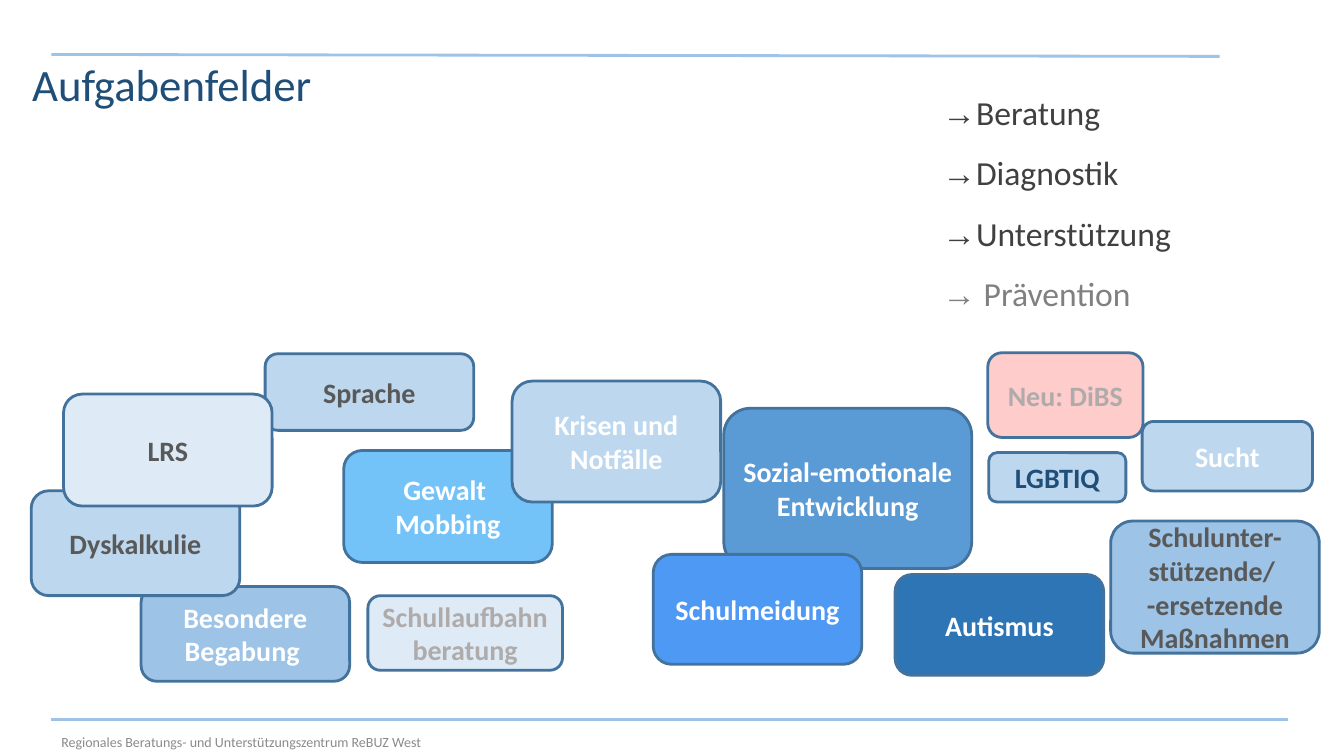
from lxml import etree
from pptx import Presentation
from pptx.dml.color import RGBColor
from pptx.enum.shapes import MSO_CONNECTOR as Connector, MSO_SHAPE as Shape
from pptx.enum.text import MSO_ANCHOR as Anchor, MSO_AUTO_SIZE as AutoSize, PP_ALIGN as Align
from pptx.oxml.ns import qn
from pptx.util import Pt

WHITE = RGBColor(0xFF, 0xFF, 0xFF)
NAVY = RGBColor(0x1F, 0x4E, 0x79)
OUTLINE = RGBColor(0x43, 0x72, 0x9D)
DEEP = RGBColor(0x2E, 0x75, 0xB6)
BLUE = RGBColor(0x5B, 0x9B, 0xD5)
VIVID = RGBColor(0x4E, 0x99, 0xF4)
SKY = RGBColor(0x74, 0xC3, 0xF8)
MID = RGBColor(0x9D, 0xC3, 0xE6)
LIGHT = RGBColor(0xBD, 0xD7, 0xEE)
PALE = RGBColor(0xDE, 0xEB, 0xF7)
PINK = RGBColor(0xFF, 0xCC, 0xCC)
DARK_GREY = RGBColor(0x40, 0x40, 0x40)
TEXT_GREY = RGBColor(0x59, 0x59, 0x59)
MID_GREY = RGBColor(0x80, 0x80, 0x80)
FOOT_GREY = RGBColor(0x8B, 0x8B, 0x8B)
SOFT_GREY = RGBColor(0xAF, 0xAB, 0xAB)

SERVICES = [("Beratung", DARK_GREY), ("Diagnostik", DARK_GREY),
            ("Unterstützung", DARK_GREY), (" Prävention", MID_GREY)]

# Back to front: text, left, top, width, height, fill, text colour
FIELDS = [
    ("Gewalt \nMobbing", 245.5, 321.8, 149, 80, SKY, WHITE),
    ("Krisen und Notfälle", 365.8, 272.2, 149, 86.4, LIGHT, WHITE),
    ("Sozial-emotionale Entwicklung", 517, 291.6, 177.1, 114.5, BLUE, WHITE),
    ("Besondere Begabung ", 100.8, 419, 149, 67.7, MID, WHITE),
    ("Dyskalkulie", 22.3, 350.6, 149, 74.9, LIGHT, TEXT_GREY),
    ("Autismus", 639.4, 410.4, 149, 72, DEEP, WHITE),
    ("Sprache", 189.4, 252.7, 149, 54.7, LIGHT, TEXT_GREY),
    ("Schullaufbahnberatung", 262.8, 425.5, 139, 53.3, PALE, SOFT_GREY),
    ("Schulmeidung", 466.6, 396, 149, 78.5, VIVID, WHITE),
    ("Sucht", 815.8, 301, 121.7, 49.7, LIGHT, WHITE),
    ("LRS", 45.4, 281.5, 149, 80, PALE, TEXT_GREY),
    ("Neu: DiBS", 705.6, 252, 110.9, 60.5, PINK, SOFT_GREY),
    ("LGBTIQ", 706.3, 323.3, 97.9, 35.3, LIGHT, NAVY),
    ("Schulunter-stützende/ \v-ersetzende\nMaßnahmen",
     793.4, 372.2, 149, 94.3, MID, TEXT_GREY),
]


def format_run(r, size, color, font="Calibri", bold=False):
    r.font.name, r.font.size, r.font.bold = font, Pt(size), bold
    r.font.color.rgb = color


def place(sp, left, top, width, height, anchor=Anchor.TOP):
    sp.left, sp.top, sp.width, sp.height = map(Pt, (left, top, width, height))
    tf = sp.text_frame
    tf.word_wrap, tf.auto_size, tf.vertical_anchor = True, AutoSize.NONE, anchor
    return tf


def add_rule(s, x1, y1, x2, y2):
    line = s.shapes.add_connector(Connector.STRAIGHT, Pt(x1), Pt(y1), Pt(x2), Pt(y2))
    line.line.color.rgb = MID
    line.line.width = Pt(0)
    etree.SubElement(line._element.spPr, qn("a:effectLst"))


def add_title(s, left, top, width, height):
    tf = place(s.shapes.title, left, top, width, height)
    tf.text = "Aufgabenfelder"
    p = tf.paragraphs[0]
    p.alignment, p.line_spacing = Align.LEFT, 0.9
    format_run(p.runs[0], 32, NAVY)


def add_footer(s, left, top, width, height):
    sp = s.shapes.add_textbox(0, 0, 0, 0)
    tf = place(sp, left, top, width, height, Anchor.MIDDLE)
    tf.text = "Regionales Beratungs- und Unterstützungszentrum ReBUZ West"
    format_run(tf.paragraphs[0].runs[0], 10, FOOT_GREY)


def add_services(s, left, top, width, height):
    tf = place(s.placeholders[1], left, top, width, height)
    for i, (service, color) in enumerate(SERVICES):
        p = tf.add_paragraph() if i else tf.paragraphs[0]
        pPr = p._p.get_or_add_pPr()
        pPr.set("marL", "0")
        pPr.set("indent", "0")
        etree.SubElement(pPr, qn("a:buNone"))
        p.line_spacing, p.space_before = 1.5, Pt(0)
        for text, font in (("→", "Arial"), (service, "Calibri")):
            r = p.add_run()
            r.text = text
            format_run(r, 24, color, font)


def add_field(s, text, left, top, width, height, fill, color):
    sp = s.shapes.add_shape(Shape.ROUNDED_RECTANGLE, 0, 0, 0, 0)
    tf = place(sp, left, top, width, height, Anchor.MIDDLE)
    sp.shadow.inherit = False
    sp.fill.solid()
    sp.fill.fore_color.rgb = fill
    sp.line.color.rgb = OUTLINE
    sp.line.width = Pt(2)
    tf.text = text
    for p in tf.paragraphs:
        p.alignment = Align.CENTER
        for r in p.runs:
            format_run(r, 20, color, bold=True)


def build_slide(prs):
    s = prs.slides.add_slide(prs.slide_layouts[1])
    # Rules, title and footer
    add_rule(s, 36.7, 514.1, 920.2, 514.1)
    add_rule(s, 36.7, 38.9, 871.2, 40.3)
    add_title(s, 15.8, 41, 236.9, 34.6)
    add_footer(s, 36.7, 517, 883.4, 25.9)
    # Services list
    add_services(s, 666, 47.5, 201.6, 177.8)
    # Overlapping fields of work
    for field in FIELDS:
        add_field(s, *field)


def main():
    prs = Presentation()
    prs.slide_width, prs.slide_height = Pt(960), Pt(540)
    build_slide(prs)
    prs.save("out.pptx")


if __name__ == "__main__":
    main()
